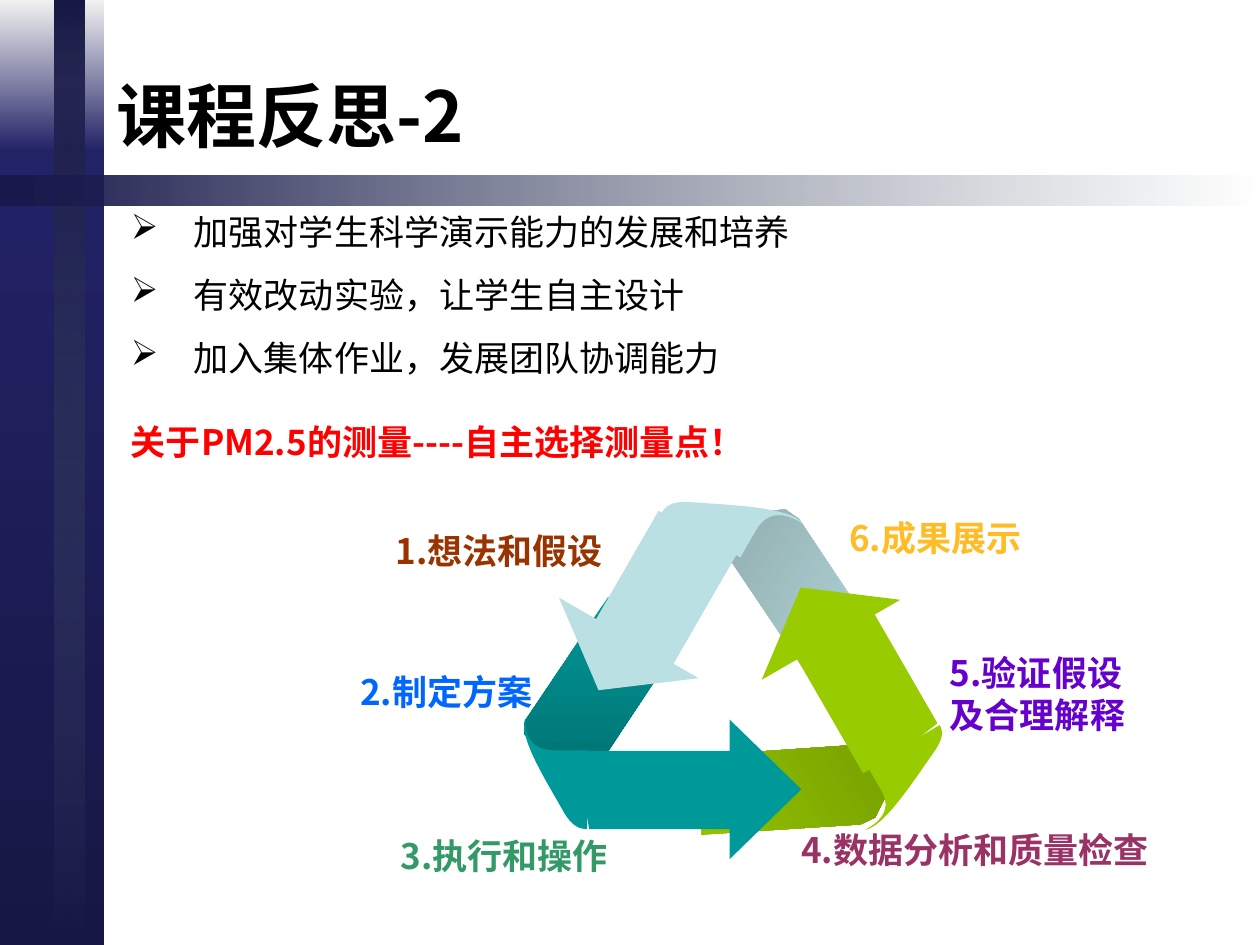
from lxml.etree import SubElement
from pptx import Presentation
from pptx.dml.color import RGBColor
from pptx.enum.shapes import MSO_SHAPE as Preset
from pptx.enum.text import MSO_ANCHOR as Anchor, MSO_AUTO_SIZE as Fit, PP_ALIGN as Align
from pptx.oxml import parse_xml
from pptx.oxml.ns import nsdecls, qn
from pptx.util import Inches, Pt

WIDTH, HEIGHT = 10, 7.5
FONT = "Noto Sans CJK SC"
COLORS = dict(
    black="000000", red="FF0000", mist="F2F2F2", navy="222267", night="171745",
    band="19194D", slate="51616F", teal="009999", deep_teal="006D6D",
    ice="BBE0E3", deep_ice="86A0A2", lime="99CC00", deep_lime="6D9200",
    green="339966", purple="6600CC", brown="993300", blue="0066FF",
    plum="993366", amber="FFBC26",
)

TITLE = "课程反思-2"
REFLECTIONS = [
    "加强对学生科学演示能力的发展和培养",
    "有效改动实验，让学生自主设计",
    "加入集体作业，发展团队协调能力",
]
HIGHLIGHT = "关于PM2.5的测量----自主选择测量点！"
STEPS = [
    ("1.想法和假设", "brown", (3.04, 4.15, 1.89, 0.44), True),
    ("2.制定方案", "blue", (2.76, 5.27, 1.61, 0.44), True),
    ("3.执行和操作", "green", (3.08, 6.57, 1.9, 0.44), True),
    ("4.数据分析和质量检查", "plum", (6.26, 6.53, 3.03, 0.44), False),
    ("5.验证假设及合理解释", "purple", (7.44, 5.12, 1.68, 0.77), True),
    ("6.成果展示", "amber", (6.64, 4.05, 1.68, 0.44), True),
]

BANDS = [
    ((0, 0, 0.83, HEIGHT), 0, [(0, "mist", 100), (16, "navy", 100), (100, "night", 100)]),
    ((0.43, 0, 0.24, HEIGHT), 0, [(0, "night", 100), (100, "slate", 0)]),
    ((4.88, -3.49, 0.24, WIDTH), 270, [(0, "band", 100), (100, "slate", 0)]),
]

ARROW_TURNS = dict(teal=0, ice=120, lime=240)
ARROW_PARTS = dict(
    teal=dict(back=(4.16, 4.74, 1.28, 1.57), head=(5.52, 5.98, 1.11, 0.57),
              shaft=(4.62, 5.96, 1.41, 0.62), curl=(4.15, 5.7, 0.51, 0.88)),
    ice=dict(back=(5.71, 3.78, 1.1, 1.83), head=(4.23, 5.03, 1.28, 0.48),
             shaft=(4.65, 4.36, 1.21, 0.71), curl=(5.56, 3.6, 0.5, 1.01)),
    lime=dict(back=(5.82, 5.27, 1.1, 1.83), head=(5.84, 4.63, 1.27, 0.48),
              shaft=(6.25, 5.08, 1.21, 0.71), curl=(6.94, 5.71, 0.44, 0.93)),
)
STACK = [
    ("teal", ["back"]),
    ("ice", ["back", "head", "shaft", "curl"]),
    ("lime", ["back", "head", "shaft", "curl"]),
    ("teal", ["curl", "head", "shaft"]),
]


def bezier(start, control_a, control_b, end, steps=12):
    def at(t):
        weights = ((1 - t) ** 3, 3 * t * (1 - t) ** 2, 3 * t * t * (1 - t), t ** 3)
        return tuple(
            sum(weight * value for weight, value in zip(weights, axis))
            for axis in zip(start, control_a, control_b, end)
        )
    return [at(step / steps) for step in range(steps + 1)]


UNIT_OUTLINES = dict(
    back=[(1, 0.19), (0.34, 1), (0, 0.69), (0.01, 0.62), (0.52, 0)],
    shaft=[(1, 0), (0, 0), (0, 0.51), (0.04, 1), (1, 1)],
    curl=[(1, 0.29)]
    + bezier((1, 1), (0.83, 1), (0.74, 0.94), (0.65, 0.86))
    + bezier((0.65, 0.86), (0.4, 0.6), (-0.1, 0.15), (0.04, 0))
    + bezier((0.04, 0), (0.02, 0.2), (0.2, 0.29), (0.5, 0.29)),
)


def rgb(color):
    return RGBColor.from_string(COLORS[color])


def paint(shape, color):
    shape.shadow.inherit = False
    shape.line.fill.background()
    shape.fill.solid()
    shape.fill.fore_color.rgb = rgb(color)


def paint_downward(shape, stops):
    paint(shape, stops[0][1])
    solid = shape._element.spPr.find(qn("a:solidFill"))
    marks = "".join(
        f'<a:gs pos="{share * 1000}"><a:srgbClr val="{COLORS[color]}">'
        f'<a:alpha val="{opacity * 1000}"/></a:srgbClr></a:gs>'
        for share, color, opacity in stops
    )
    gradient = parse_xml(
        f'<a:gradFill {nsdecls("a")} rotWithShape="1"><a:gsLst>{marks}</a:gsLst>'
        '<a:lin ang="5400000" scaled="0"/></a:gradFill>'
    )
    solid.getparent().replace(solid, gradient)


def add_preset(slide, preset, place, rotation):
    shape = slide.shapes.add_shape(preset, *map(Inches, place))
    shape.rotation = rotation
    return shape


def add_outline(slide, unit_points, place, rotation):
    left, top, width, height = map(Inches, place)
    points = [(left + x * width, top + y * height) for x, y in unit_points]
    outline = slide.shapes.build_freeform(*points[0])
    outline.add_line_segments(points[1:], close=True)
    shape = outline.convert_to_shape()
    shape.rotation = rotation
    return shape


def add_arrow_part(slide, color, part):
    place, turn = ARROW_PARTS[color][part], ARROW_TURNS[color]
    if part == "head":
        paint(add_preset(slide, Preset.ISOSCELES_TRIANGLE, place, turn + 90), color)
        return
    shape = add_outline(slide, UNIT_OUTLINES[part], place, turn)
    if part == "back":
        paint_downward(shape, [(0, color, 100), (100, f"deep_{color}", 100)])
    else:
        paint(shape, color)


def add_frame(slide, place, wraps=True, fit=Fit.NONE, anchor=Anchor.TOP):
    frame = slide.shapes.add_textbox(*map(Inches, place)).text_frame
    layout = dict(word_wrap=wraps, auto_size=fit, vertical_anchor=anchor)
    for key, value in layout.items():
        setattr(frame, key, value)
    return frame


def write(paragraph, text, color, size=20, bold=False, before=0):
    paragraph.alignment = Align.LEFT
    paragraph.space_before = Pt(before)
    run = paragraph.add_run()
    run.text = text
    for key, value in dict(name=FONT, size=Pt(size), bold=bold).items():
        setattr(run.font, key, value)
    run.font.color.rgb = rgb(color)
    SubElement(run.font._element, qn("a:ea")).set("typeface", FONT)


def add_bullet(paragraph, mark="➢", indent=Inches(0.5)):
    properties = paragraph._p.get_or_add_pPr()
    properties.set("marL", str(indent))
    properties.set("indent", str(-indent))
    SubElement(properties, qn("a:buChar")).set("char", mark)


def main():
    deck = Presentation()
    deck.slide_width, deck.slide_height = Inches(WIDTH), Inches(HEIGHT)
    slide = deck.slides.add_slide(deck.slide_layouts[6])

    for place, rotation, stops in BANDS:
        paint_downward(add_preset(slide, Preset.RECTANGLE, place, rotation), stops)

    title = add_frame(slide, (0.83, 0.29, 8.49, 1), anchor=Anchor.BOTTOM)
    write(title.paragraphs[0], TITLE, "black", size=40, bold=True)

    body = add_frame(slide, (0.94, 1.62, 8.62, 5.48))
    for order, reflection in enumerate(REFLECTIONS):
        paragraph = body.add_paragraph() if order else body.paragraphs[0]
        write(paragraph, reflection, "black", before=12)
        add_bullet(paragraph)
    write(body.add_paragraph(), HIGHLIGHT, "red", bold=True, before=24)

    for color, parts in STACK:
        for part in parts:
            add_arrow_part(slide, color, part)

    for step, color, place, wraps in STEPS:
        label = add_frame(slide, place, wraps, Fit.SHAPE_TO_FIT_TEXT)
        write(label.paragraphs[0], step, color, bold=True)

    deck.save("out.pptx")


if __name__ == "__main__":
    main()
